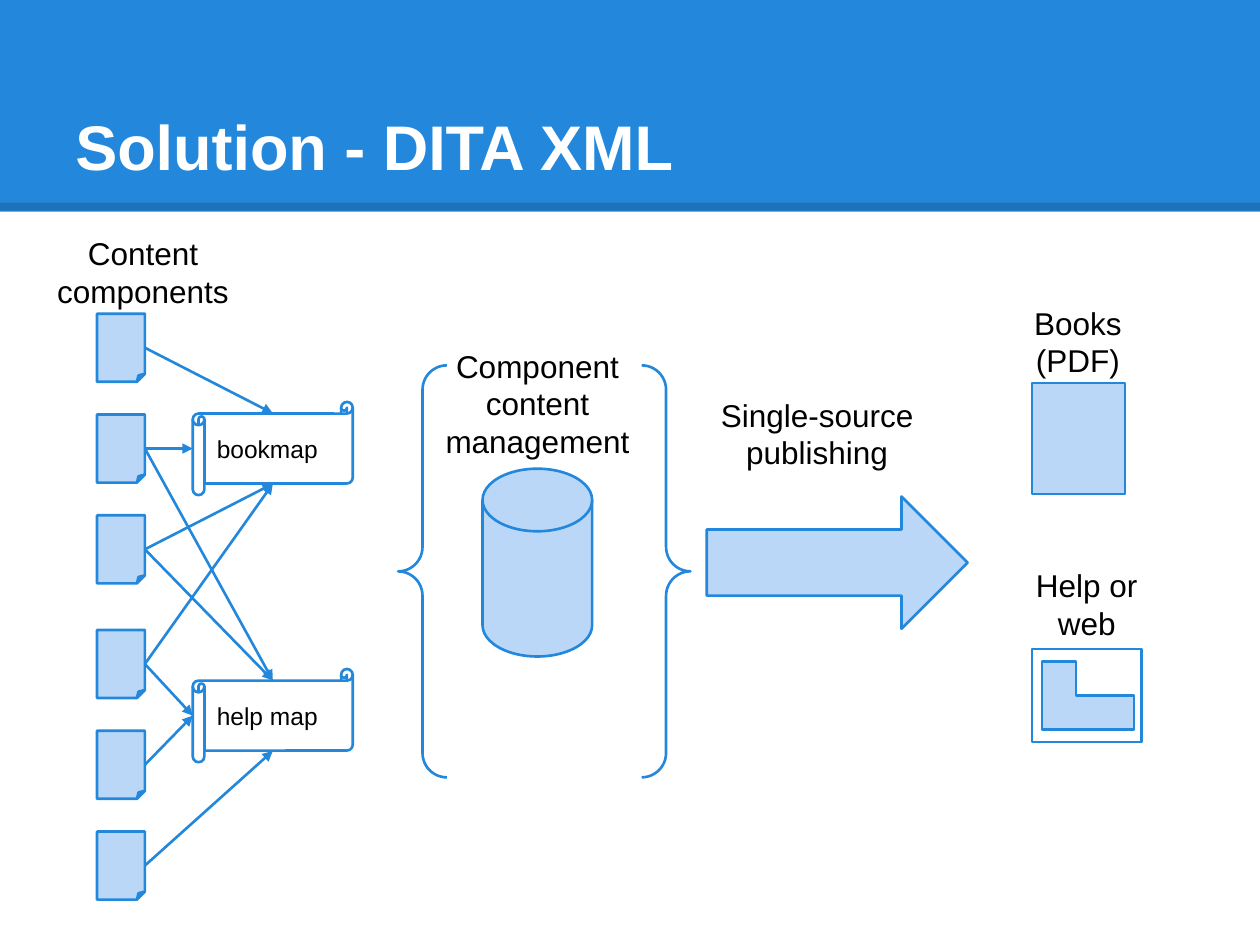
from lxml.etree import SubElement
from pptx import Presentation
from pptx.dml.color import RGBColor
from pptx.enum.shapes import MSO_CONNECTOR, MSO_SHAPE
from pptx.enum.text import MSO_ANCHOR, PP_ALIGN
from pptx.oxml.ns import qn
from pptx.util import Inches, Pt

BLUE = RGBColor(0x23, 0x88, 0xDB)
PALE = RGBColor(0xBB, 0xD7, 0xF8)
WHITE = RGBColor(0xFF, 0xFF, 0xFF)
BLACK = RGBColor(0, 0, 0)

TOP, LEFT, BOTTOM, RIGHT = range(4)
CURL = 0.09  # gap between a scroll's frame and its sheet


def add_shape(shapes, kind, box, fill=None, line=BLUE):
    shape = shapes.add_shape(kind, *map(Inches, box))
    shape.shadow.inherit = False
    if fill is None:
        shape.fill.background()
    else:
        shape.fill.solid()
        shape.fill.fore_color.rgb = fill
    if line is None:
        shape.line.fill.background()
    else:
        shape.line.color.rgb = line
        shape.line.width = Pt(1.5)
    return shape


def set_text(shape, text, size, color=BLACK, bold=False,
             align=PP_ALIGN.LEFT, anchor=MSO_ANCHOR.TOP):
    frame = shape.text_frame
    frame.word_wrap = True
    frame.vertical_anchor = anchor
    frame.margin_left = frame.margin_right = Inches(0.1)
    frame.margin_top = frame.margin_bottom = Inches(0.1)
    para = frame.paragraphs[0]
    para.text = text
    para.alignment = align
    font = para.font
    font.name, font.size, font.bold = "Arial", Pt(size), bold
    font.color.rgb = color


def add_label(shapes, text, box):
    label = shapes.add_textbox(*map(Inches, box))
    set_text(label, text, 18, align=PP_ALIGN.CENTER)


def add_scroll(shapes, text, top):
    scroll = add_shape(shapes, MSO_SHAPE.HORIZONTAL_SCROLL,
                       (1.53, top, 1.27, 0.74))
    set_text(scroll, text, 14, anchor=MSO_ANCHOR.MIDDLE)
    return scroll


def add_line(shapes, color, width, ends=(0, 0, 0, 0)):
    line = shapes.add_connector(MSO_CONNECTOR.STRAIGHT, *map(Inches, ends))
    line.line.color.rgb = color
    line.line.width = Pt(width)
    SubElement(line._element.spPr, qn("a:effectLst"))
    return line


def add_arrow(shapes, page, scroll, side):
    arrow = add_line(shapes, BLUE, 1.5)
    arrow.begin_connect(page, RIGHT)
    arrow.end_connect(scroll, side)
    # Reach the sheet itself, inside the curled ends
    if side == TOP:
        arrow.end_y = scroll.top + Inches(CURL)
    elif side == BOTTOM:
        arrow.end_y = scroll.top + scroll.height - Inches(CURL)
    stroke = arrow._element.spPr.find(qn("a:ln"))
    SubElement(stroke, qn("a:tailEnd"), type="triangle")


def add_header(shapes):
    add_shape(shapes, MSO_SHAPE.RECTANGLE, (0, 0, 10, 1.68), BLUE, None)
    rule = add_line(shapes, BLACK, 4.5, (0, 1.64, 10, 1.64))
    tint = next(rule._element.iter(qn("a:srgbClr")))
    SubElement(tint, qn("a:alpha"), val="15000")
    title = shapes.add_textbox(*map(Inches, (0.5, 0.3, 9, 1.25)))
    set_text(title, "Solution - DITA XML", 36, WHITE, True,
             anchor=MSO_ANCHOR.BOTTOM)


def add_maps(shapes):
    # Two runs of three pages
    pages = [add_shape(shapes, MSO_SHAPE.FOLDED_CORNER,
                       (0.77, start + 0.8 * row, 0.38, 0.54), PALE)
             for start in (2.49, 5) for row in range(3)]
    book = add_scroll(shapes, "bookmap", 3.19)
    help_map = add_scroll(shapes, "help map", 5.31)
    links = [
        (5, help_map, BOTTOM), (2, help_map, TOP), (2, book, BOTTOM),
        (1, book, LEFT), (1, help_map, TOP), (0, book, TOP),
        (3, book, BOTTOM), (3, help_map, LEFT), (4, help_map, LEFT),
    ]
    for page, scroll, side in links:
        add_arrow(shapes, pages[page], scroll, side)


def add_window(shapes):
    group = shapes.add_group_shape().shapes
    pane = add_shape(group, MSO_SHAPE.RECTANGLE,
                     (8.27, 5.25, 0.73, 0.54), PALE)
    # The L-shaped preset has no MSO_SHAPE member
    pane._element.spPr.find(qn("a:prstGeom")).set("prst", "corner")
    add_shape(group, MSO_SHAPE.RECTANGLE, (8.19, 5.15, 0.87, 0.74))


def main():
    deck = Presentation()
    deck.slide_width, deck.slide_height = Inches(10), Inches(7.5)
    shapes = deck.slides.add_slide(deck.slide_layouts[6]).shapes

    add_header(shapes)

    # Content components and the maps that use them
    add_maps(shapes)

    # Store, publishing step and outputs
    add_shape(shapes, MSO_SHAPE.FLOWCHART_MAGNETIC_DISK,
              (3.83, 3.72, 0.87, 1.49), PALE)
    add_shape(shapes, MSO_SHAPE.DOUBLE_BRACE, (3.16, 2.9, 2.32, 3.27))
    add_shape(shapes, MSO_SHAPE.RIGHT_ARROW, (5.61, 3.94, 2.07, 1.05), PALE)
    add_shape(shapes, MSO_SHAPE.FLOWCHART_PROCESS,
              (8.19, 3.04, 0.74, 0.88), PALE)
    add_window(shapes)

    # Labels
    labels = [
        ("Content components", (0.26, 1.76, 1.75, 0.66)),
        ("Component content management", (3.39, 2.65, 1.75, 1.05)),
        ("Single-source\vpublishing", (5.61, 3.04, 1.75, 0.66)),
        ("Books (PDF)", (7.83, 2.31, 1.45, 0.66)),
        ("Help or web", (7.9, 4.39, 1.45, 0.66)),
    ]
    for text, box in labels:
        add_label(shapes, text, box)

    deck.save("out.pptx")


if __name__ == "__main__":
    main()
